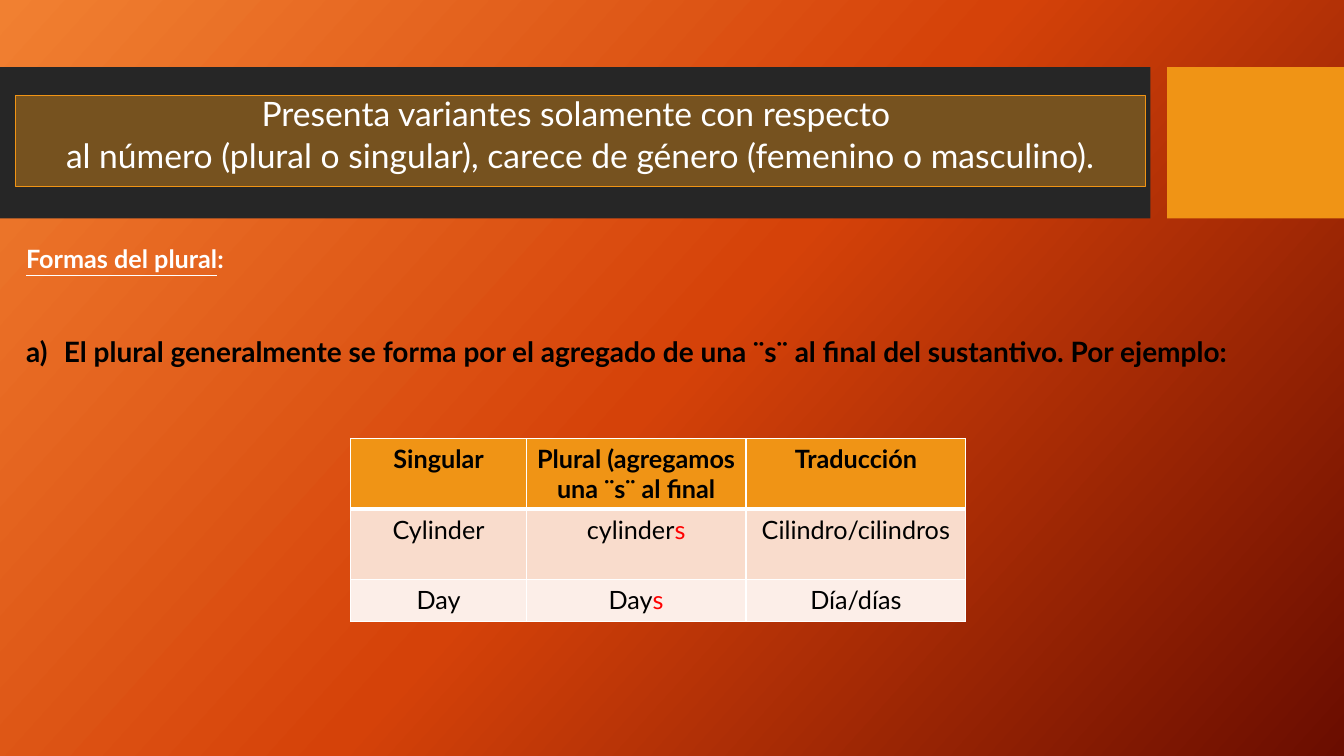
from copy import deepcopy

from pptx import Presentation
from pptx.dml.color import RGBColor
from pptx.enum.shapes import MSO_SHAPE as Shape
from pptx.enum.text import MSO_ANCHOR as Anchor, PP_ALIGN as Align
from pptx.oxml import parse_xml
from pptx.oxml.ns import nsdecls, qn
from pptx.oxml.xmlchemy import OxmlElement
from pptx.util import Pt

FONT = "Lato"
WHITE, BLACK, RED, ORANGE = "FFFFFF", "000000", "FF0000", "F09415"
GRADIENT = [("F18031", 0), ("D54209", 0.5), ("6A0D00", 1)]
TITLE = [
    "Presenta variantes solamente con respecto ",
    "al número (plural o singular), carece de género (femenino o masculino).",
]
RULE = "El plural generalmente se forma por el agregado de una ¨s¨ al final del sustantivo. Por ejemplo:"
ROWS = [
    [["Singular"], ["Plural (agregamos una ¨s¨ al final"], ["Traducción"]],
    [["Cylinder"], ["cylinder", "s"], ["Cilindro/cilindros"]],
    [["Day"], ["Day", "s"], ["Día/días"]],
]
ROW_FILLS = [ORANGE, "F9DCCC", "FCEEE8"]
ROW_HEIGHTS = [50.5, 50.5, 29.5]
COLUMN_WIDTHS = [125.3, 157, 157]


def rgb(value):
    """Return the colour of a hex string."""
    return RGBColor.from_string(value)


def set_background(slide):
    """Fill the slide background with the three-stop gradient."""
    fill = slide.background.fill
    fill.gradient()
    fill.gradient_angle = 318
    stops = slide.element.find(".//" + qn("a:gsLst"))
    stops.append(deepcopy(stops[0]))
    for stop, (color, position) in zip(fill.gradient_stops, GRADIENT):
        stop.color.rgb = rgb(color)
        stop.position = position


def add_rectangle(slide, left, top, width, height, color):
    """Add a plain rectangle without outline."""
    shape = slide.shapes.add_shape(
        Shape.RECTANGLE, Pt(left), Pt(top), Pt(width), Pt(height))
    shape.shadow.inherit = False
    shape.fill.solid()
    shape.fill.fore_color.rgb = rgb(color)
    shape.line.fill.background()
    return shape


def add_run(paragraph, text, size, color, bold=False, underline=False):
    """Append a formatted run to a paragraph."""
    run = paragraph.add_run()
    run.text = text
    run.font.name = FONT
    run.font.size = Pt(size)
    run.font.color.rgb = rgb(color)
    run.font.bold = bold
    run.font.underline = underline


def add_title(slide):
    """Add the translucent title panel."""
    panel = add_rectangle(slide, 10.8, 68.4, 807.1, 64.8, ORANGE)
    alpha = OxmlElement("a:alpha")
    alpha.set("val", "40000")
    panel.element.spPr.find(".//" + qn("a:srgbClr")).append(alpha)
    panel.line.color.rgb = rgb(ORANGE)
    panel.line.width = Pt(0.75)
    frame = panel.text_frame
    frame.vertical_anchor = Anchor.TOP
    for index, line in enumerate(TITLE):
        paragraph = frame.add_paragraph() if index else frame.paragraphs[0]
        paragraph.alignment = Align.CENTER
        paragraph.line_spacing = 0.8
        paragraph.space_before = Pt(7 * index)
        add_run(paragraph, line, 24, WHITE)


def number_paragraph(paragraph, indent):
    """Give a paragraph a hanging letter such as a)."""
    properties = paragraph._p.get_or_add_pPr()
    properties.set("marL", str(Pt(indent)))
    properties.set("indent", str(-Pt(indent)))
    for tag, name, value in [("a:buFont", "typeface", FONT),
                             ("a:buAutoNum", "type", "alphaLcParenR")]:
        element = OxmlElement(tag)
        element.set(name, value)
        properties.append(element)


def add_rule(slide):
    """Add the heading and the lettered rule."""
    box = slide.shapes.add_textbox(Pt(11.5), Pt(170.6), Pt(948), Pt(143.3))
    frame = box.text_frame
    frame.word_wrap = True
    heading = frame.paragraphs[0]
    add_run(heading, "Formas del plural", 18, WHITE, bold=True, underline=True)
    add_run(heading, ":", 18, WHITE, bold=True)
    rule = frame.add_paragraph()
    rule.space_before = Pt(43.2)
    number_paragraph(rule, 27)
    add_run(rule, RULE, 20, BLACK, bold=True)


def set_borders(cell, widths):
    """Draw white cell borders, given widths by side."""
    properties = cell._tc.get_or_add_tcPr()
    for index, (side, width) in enumerate(widths.items()):
        properties.insert(index, parse_xml(
            f'<a:ln{side} {nsdecls("a")} w="{Pt(width)}"><a:solidFill>'
            f'<a:srgbClr val="{WHITE}"/></a:solidFill></a:ln{side}>'))


def add_examples(slide):
    """Add the table of singular and plural examples."""
    table = slide.shapes.add_table(
        len(ROWS), len(COLUMN_WIDTHS), Pt(250.6), Pt(313.2),
        Pt(sum(COLUMN_WIDTHS)), Pt(sum(ROW_HEIGHTS))).table
    for column, width in zip(table.columns, COLUMN_WIDTHS):
        column.width = Pt(width)
    for row_index, row in enumerate(ROWS):
        table.rows[row_index].height = Pt(ROW_HEIGHTS[row_index])
        for column_index, parts in enumerate(row):
            cell = table.cell(row_index, column_index)
            cell.fill.solid()
            cell.fill.fore_color.rgb = rgb(ROW_FILLS[row_index])
            set_borders(cell, {"L": 1, "R": 1, "T": 3 if row_index == 1 else 1,
                               "B": 3 if row_index == 0 else 1})
            paragraph = cell.text_frame.paragraphs[0]
            paragraph.alignment = Align.CENTER
            for text, color in zip(parts, [BLACK, RED]):
                add_run(paragraph, text, 18, color, bold=row_index == 0)


def main():
    """Build the slide and save it."""
    presentation = Presentation()
    presentation.slide_width, presentation.slide_height = Pt(960), Pt(540)
    slide = presentation.slides.add_slide(presentation.slide_layouts[6])
    set_background(slide)
    add_rectangle(slide, 0, 48, 821.7, 108, "262626")
    add_rectangle(slide, 833.7, 48, 126.3, 108, ORANGE)
    add_title(slide)
    add_rule(slide)
    add_examples(slide)
    presentation.save("out.pptx")


if __name__ == "__main__":
    main()
